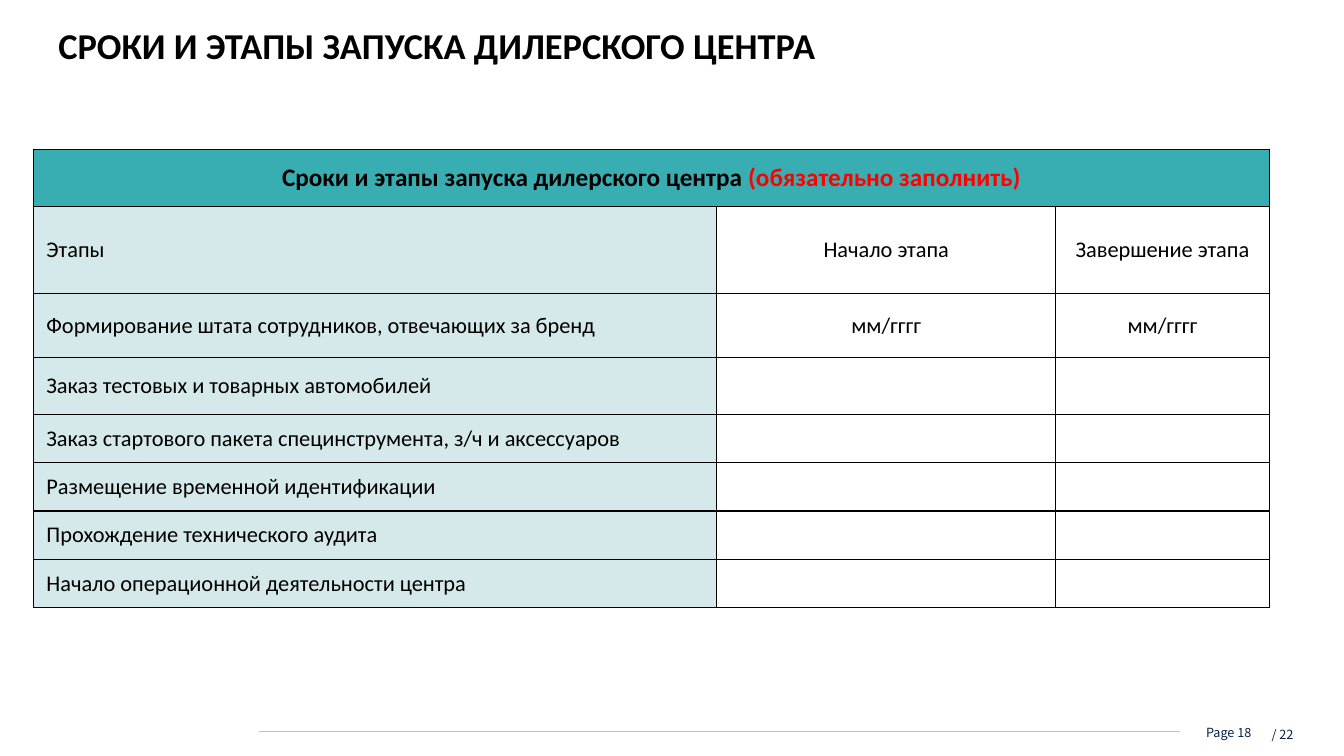
from dataclasses import dataclass

from lxml.etree import SubElement as Sub
from pptx import Presentation
from pptx.dml.color import RGBColor as Rgb
from pptx.enum.shapes import MSO_CONNECTOR as Conn
from pptx.enum.text import MSO_ANCHOR as Anchor, PP_ALIGN as Align
from pptx.oxml.ns import qn
from pptx.util import Emu, Inches, Pt

WIDE, HIGH = Inches(13.33), Inches(7.5)
HUES = {"ink": "000000", "red": "FF0000", "teal": "39AEB2",
        "pale": "D6E9EA", "navy": "072146", "grey": "BFBFBF"}
FACE, FOOT = "Calibri", "Noto Sans CJK SC"


# Lengths: percent of the slide's width and height
def col(share: float) -> Emu:
    return Emu(round(WIDE * share / 100))


def row(share: float) -> Emu:
    return Emu(round(HIGH * share / 100))


def hue(name: str) -> Rgb:
    return Rgb.from_string(HUES[name])


@dataclass
class Label:
    text: str
    left: float
    top: float
    width: float
    height: float
    size: float
    font: str
    color: str
    bold: bool = False
    align: Align = Align.LEFT
    inset: tuple = (0, 0)
    lines: float = 1.0


@dataclass
class Stage:
    height: float
    name: str
    start: str = ""
    end: str = ""


LABELS = [
    Label("Page 18", 82.9, 95.87, 10.2, 4.4, 9, FOOT, "navy", align=Align.RIGHT),
    Label("/ 22", 89.04, 94.67, 7.5, 4.13, 9, FOOT, "navy",
          align=Align.RIGHT, inset=(0.04, 0.04), lines=1.5),
    Label("СРОКИ И ЭТАПЫ ЗАПУСКА ДИЛЕРСКОГО ЦЕНТРА", 3.6, 2.4, 59.03, 7.2,
          26, FACE, "ink", bold=True, inset=(0.1, 0.05)),
]
COLS = [50.86, 25.21, 15.9]
HEAD = 7.6
STAGES = [
    Stage(11.47, "Этапы", "Начало этапа", "Завершение этапа"),
    Stage(8.53, "Формирование штата сотрудников, отвечающих за бренд",
          "мм/гггг", "мм/гггг"),
    Stage(7.47, "Заказ тестовых и товарных автомобилей"),
    Stage(6.4, "Заказ стартового пакета специнструмента, з/ч и аксессуаров"),
    Stage(6.4, "Размещение временной идентификации"),
    Stage(6.4, "Прохождение технического аудита"),
    Stage(6.4, "Начало операционной деятельности центра"),
]


def write(para, text: str, *, size: float = 16, font: str = FACE,
          color: str = "ink", bold: bool = False,
          align: Align = Align.LEFT, lines: float = 1.0) -> None:
    para.alignment = align
    para.line_spacing = lines
    para.font.size = Pt(size)
    if text:
        run = para.add_run()
        run.text = text
        run.font.size, run.font.name, run.font.bold = Pt(size), font, bold
        run.font.color.rgb = hue(color)


def place(slide, label: Label) -> None:
    box = slide.shapes.add_textbox(col(label.left), row(label.top),
                                   col(label.width), row(label.height))
    frame = box.text_frame
    frame.word_wrap = True
    side, edge = label.inset
    frame.margin_left = frame.margin_right = Inches(side)
    frame.margin_top = frame.margin_bottom = Inches(edge)
    write(frame.paragraphs[0], label.text, size=label.size, font=label.font,
          color=label.color, bold=label.bold, align=label.align, lines=label.lines)


def style(cell, fill: str = "") -> None:
    cell.vertical_anchor = Anchor.MIDDLE
    cell.margin_left = cell.margin_right = Inches(0.13)
    cell.margin_top = cell.margin_bottom = Inches(0.05)
    # Borders come before the fill in the cell's XML
    props = cell._tc.get_or_add_tcPr()
    for side in "LRTB":
        line = Sub(props, qn(f"a:ln{side}"), w=str(Pt(1)))
        Sub(Sub(line, qn("a:solidFill")), qn("a:srgbClr"), val=HUES["ink"])
    if fill:
        cell.fill.solid()
        cell.fill.fore_color.rgb = hue(fill)
    else:
        cell.fill.background()


def rule(slide) -> None:
    line = slide.shapes.add_connector(Conn.STRAIGHT, col(19.28), row(96.8),
                                      col(87.77), row(96.8))
    line.line.color.rgb = hue("grey")
    line.line.width = Pt(0.5)
    Sub(line._element.spPr, qn("a:effectLst"))


def plan(slide) -> None:
    tall = HEAD + sum(stage.height for stage in STAGES)
    table = slide.shapes.add_table(len(STAGES) + 1, len(COLS), col(2.48),
                                   row(19.73), col(sum(COLS)), row(tall)).table
    table.first_row = table.horz_banding = False
    for part, width in zip(table.columns, COLS):
        part.width = col(width)

    # Heading across all columns
    table.rows[0].height = row(HEAD)
    for spot in range(len(COLS)):
        style(table.cell(0, spot), "teal")
    top = table.cell(0, 0)
    top.merge(table.cell(0, len(COLS) - 1))
    para = top.text_frame.paragraphs[0]
    for text, color in (("Сроки и этапы запуска дилерского центра ", "ink"),
                        ("(обязательно заполнить)", "red")):
        write(para, text, size=18, color=color, bold=True, align=Align.CENTER)

    # One row per stage
    for rank, stage in enumerate(STAGES, 1):
        table.rows[rank].height = row(stage.height)
        for spot, text in enumerate((stage.name, stage.start, stage.end)):
            cell = table.cell(rank, spot)
            style(cell, "" if spot else "pale")
            write(cell.text_frame.paragraphs[0], text,
                  align=Align.CENTER if spot else Align.LEFT)


def main() -> None:
    deck = Presentation()
    deck.slide_width, deck.slide_height = WIDE, HIGH
    slide = deck.slides.add_slide(deck.slide_layouts[6])
    rule(slide)
    for label in LABELS:
        place(slide, label)
    plan(slide)
    deck.save("out.pptx")


if __name__ == "__main__":
    main()
